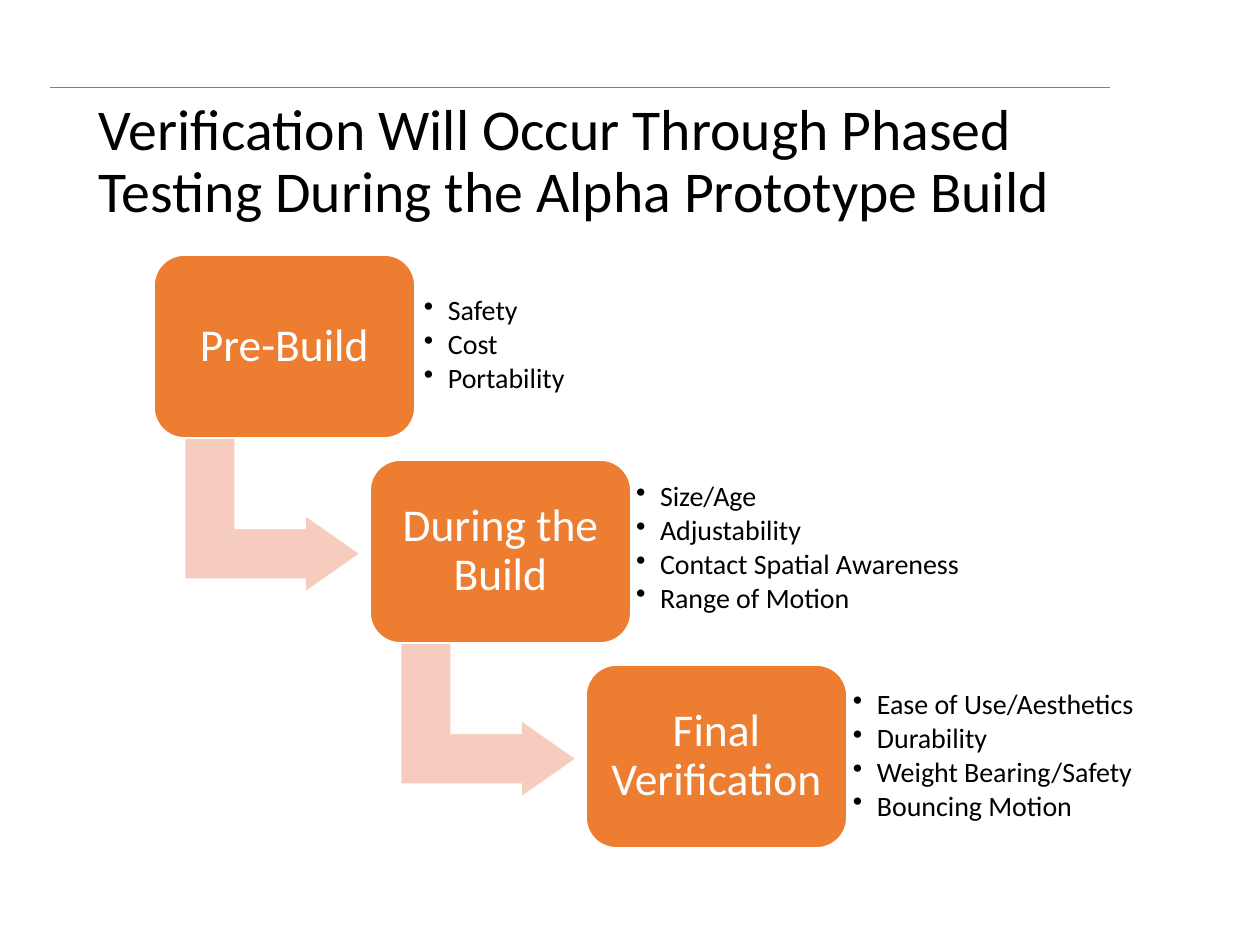
from lxml import etree
from pptx import Presentation
from pptx.dml.color import RGBColor
from pptx.enum.shapes import MSO_CONNECTOR, MSO_SHAPE
from pptx.enum.text import MSO_ANCHOR, PP_ALIGN
from pptx.oxml.ns import qn
from pptx.util import Emu, Pt

MIDDLE = MSO_ANCHOR.MIDDLE
CENTER = PP_ALIGN.CENTER
ROUNDED = MSO_SHAPE.ROUNDED_RECTANGLE
BENT_ARROW = MSO_SHAPE.BENT_UP_ARROW
STRAIGHT = MSO_CONNECTOR.STRAIGHT
SCALE = 914400 / 126


def px(*lengths):
    return [Emu(round(length * SCALE)) for length in lengths]


def style(part, size, color, inset):
    frame = part.text_frame
    frame.word_wrap = True
    frame.vertical_anchor = MIDDLE
    frame.margin_left, frame.margin_right, frame.margin_top, frame.margin_bottom = px(*[inset] * 4)
    for paragraph in frame.paragraphs:
        paragraph.line_spacing = 0.9
        paragraph.font.name = "Calibri"
        paragraph.font.size = Pt(size)
        paragraph.font.color.rgb = RGBColor.from_string(color)


prs = Presentation()
prs.slide_width, prs.slide_height = px(1260, 945)
slide = prs.slides.add_slide(prs.slide_layouts[6])
shapes = slide.shapes

rule = shapes.add_connector(STRAIGHT, *px(50, 87, 1110, 87))
rule.line.color.rgb = RGBColor.from_string("808080")
rule.line.width = Pt(0.25)
etree.SubElement(rule._element.spPr, qn("a:effectLst"))

title = shapes.add_textbox(*px(87, 93, 1086, 140))
title.text_frame.text = "Verification Will Occur Through Phased Testing During the Alpha Prototype Build"
style(title, 33, "000000", 12)

phases = [
    ("Pre-Build", ["Safety", "Cost", "Portability"], (415, 272, 190, 147)),
    ("During the Build",
     ["Size/Age", "Adjustability", "Contact Spatial Awareness", "Range of Motion"],
     (627, 475, 411, 147)),
    ("Final Verification",
     ["Ease of Use/Aesthetics", "Durability", "Weight Bearing/Safety", "Bouncing Motion"],
     (844, 683, 329, 147)),
]

for step, (name, checks, checks_area) in enumerate(phases):
    dx, dy = 216 * step, 205 * step
    pieces = []
    if step < len(phases) - 1:
        arrow = shapes.add_shape(BENT_ARROW, *px(195 + dx, 427 + dy, 155, 176))
        arrow.rotation = 90
        for index, value in enumerate((0.328, 0.25, 0.358)):
            arrow.adjustments[index] = value
        pieces.append((arrow, "F6CCBE"))

    phase = shapes.add_shape(ROUNDED, *px(154 + dx, 255 + dy, 261, 183))
    phase.text_frame.text = name
    phase.text_frame.paragraphs[0].alignment = CENTER
    style(phase, 26, "FFFFFF", 14)
    pieces.append((phase, "ED7D31"))

    for piece, color in pieces:
        piece.shadow.inherit = False
        piece.fill.solid()
        piece.fill.fore_color.rgb = RGBColor.from_string(color)
        piece.line.color.rgb = RGBColor.from_string("FFFFFF")
        piece.line.width = Pt(1)

    check_list = shapes.add_textbox(*px(*checks_area))
    check_list.text_frame.text = "\n".join(checks)
    for paragraph in check_list.text_frame.paragraphs:
        paragraph.space_after = Pt(2)
        properties = paragraph._p.get_or_add_pPr()
        indent = px(24)[0]
        properties.set("marL", str(indent))
        properties.set("indent", str(-indent))
        etree.SubElement(properties, qn("a:buChar"), char="•")
    style(check_list, 16, "000000", 9)

prs.save("out.pptx")
